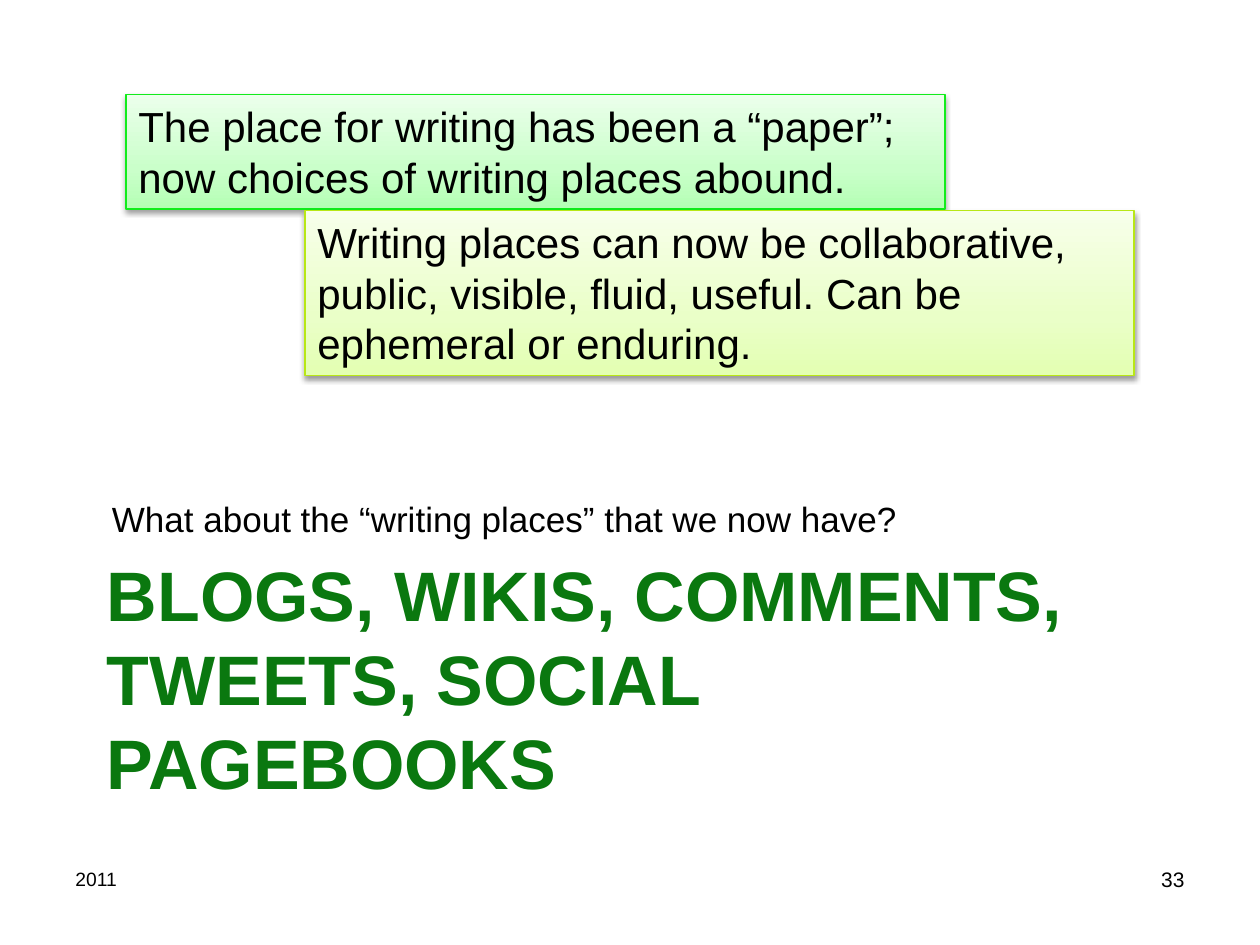
from lxml.etree import SubElement
from pptx import Presentation
from pptx.dml.color import RGBColor
from pptx.enum.shapes import MSO_SHAPE
from pptx.enum.text import MSO_ANCHOR, PP_ALIGN
from pptx.oxml.ns import qn
from pptx.util import Inches, Pt

BLACK = RGBColor(0x00, 0x00, 0x00)
TITLE_GREEN = RGBColor(0x0A, 0x78, 0x0F)
GREEN_LINE = RGBColor(0x12, 0xEC, 0x1C)
LIME_LINE = RGBColor(0xB8, 0xE7, 0x16)
GREEN_STOPS = (RGBColor(0xB4, 0xFF, 0xB4), RGBColor(0xCA, 0xFF, 0xCA), RGBColor(0xEB, 0xFF, 0xEB))
LIME_STOPS = (RGBColor(0xE3, 0xFF, 0xB2), RGBColor(0xEA, 0xFF, 0xC8), RGBColor(0xF7, 0xFF, 0xEA))
STOP_POSITIONS = (0, 35, 100)


def add_color(parent, color):
    return SubElement(parent, qn("a:srgbClr"), val=str(color))


def set_text(sp, text, size, color=BLACK, bold=False,
             align=PP_ALIGN.LEFT, anchor=MSO_ANCHOR.TOP):
    tf = sp.text_frame
    tf.word_wrap = True
    tf.vertical_anchor = anchor
    tf.text = text
    p = tf.paragraphs[0]
    p.alignment = align
    font = p.runs[0].font
    font.name = "Arial"
    font.size = Pt(size)
    font.bold = bold
    font.color.rgb = color


def add_label(slide, box, text, size, **style):
    sp = slide.shapes.add_textbox(*map(Inches, box))
    set_text(sp, text, size, **style)


def set_gradient(sp, colors):
    """Blend the colors from the bottom edge to the top."""
    sp.fill.gradient()
    sp.fill.gradient_angle = 90
    stops = sp._element.spPr.find(qn("a:gradFill")).find(qn("a:gsLst"))
    for stop in list(stops):
        stops.remove(stop)
    for position, color in zip(STOP_POSITIONS, colors):
        add_color(SubElement(stops, qn("a:gs"), pos=str(position * 1000)), color)


def set_shadow(sp):
    """Drop a soft shadow straight down."""
    sp.shadow.inherit = False
    effects = sp._element.spPr.find(qn("a:effectLst"))
    shadow = SubElement(effects, qn("a:outerShdw"), blurRad=str(Pt(3.1)),
                        dist=str(Pt(1.6)), dir="5400000", rotWithShape="0")
    SubElement(add_color(shadow, BLACK), qn("a:alpha"), val="38000")


def add_note(slide, box, text, stops, line_color):
    sp = slide.shapes.add_shape(MSO_SHAPE.RECTANGLE, *map(Inches, box))
    set_gradient(sp, stops)
    sp.line.color.rgb = line_color
    sp.line.width = Pt(0.75)
    set_shadow(sp)
    set_text(sp, text, 24)


def add_heading(slide, left, top, width):
    add_label(slide, (left, top, width, 2.35),
              "BLOGS, WIKIS, COMMENTS, TWEETS, SOCIAL PAGEBOOKS",
              40, color=TITLE_GREEN, bold=True)
    add_label(slide, (left + 0.04, top - 1.15, width, 1.15),
              "What about the “writing places” that we now have?",
              20, anchor=MSO_ANCHOR.BOTTOM)


def add_footer(slide, left, top, right):
    height = 0.52
    add_label(slide, (left, top, 0.58, height), "2011", 11)
    add_label(slide, (right - 0.5, top, 0.5, height), "33", 12, align=PP_ALIGN.RIGHT)


def main():
    prs = Presentation()
    prs.slide_width, prs.slide_height = Inches(10), Inches(7.5)
    slide = prs.slides.add_slide(prs.slide_layouts[6])
    add_heading(slide, 0.75, 4.33, 8.5)
    add_note(slide, (1, 0.75, 6.5, 0.91),
             "The place for writing has been a “paper”; now choices of writing places abound.",
             GREEN_STOPS, GREEN_LINE)
    add_note(slide, (2.42, 1.67, 6.58, 1.31),
             "Writing places can now be collaborative, public, visible, fluid, useful. "
             "Can be ephemeral or enduring.",
             LIME_STOPS, LIME_LINE)
    add_footer(slide, 0.5, 6.83, 9.5)
    prs.save("out.pptx")


if __name__ == "__main__":
    main()
